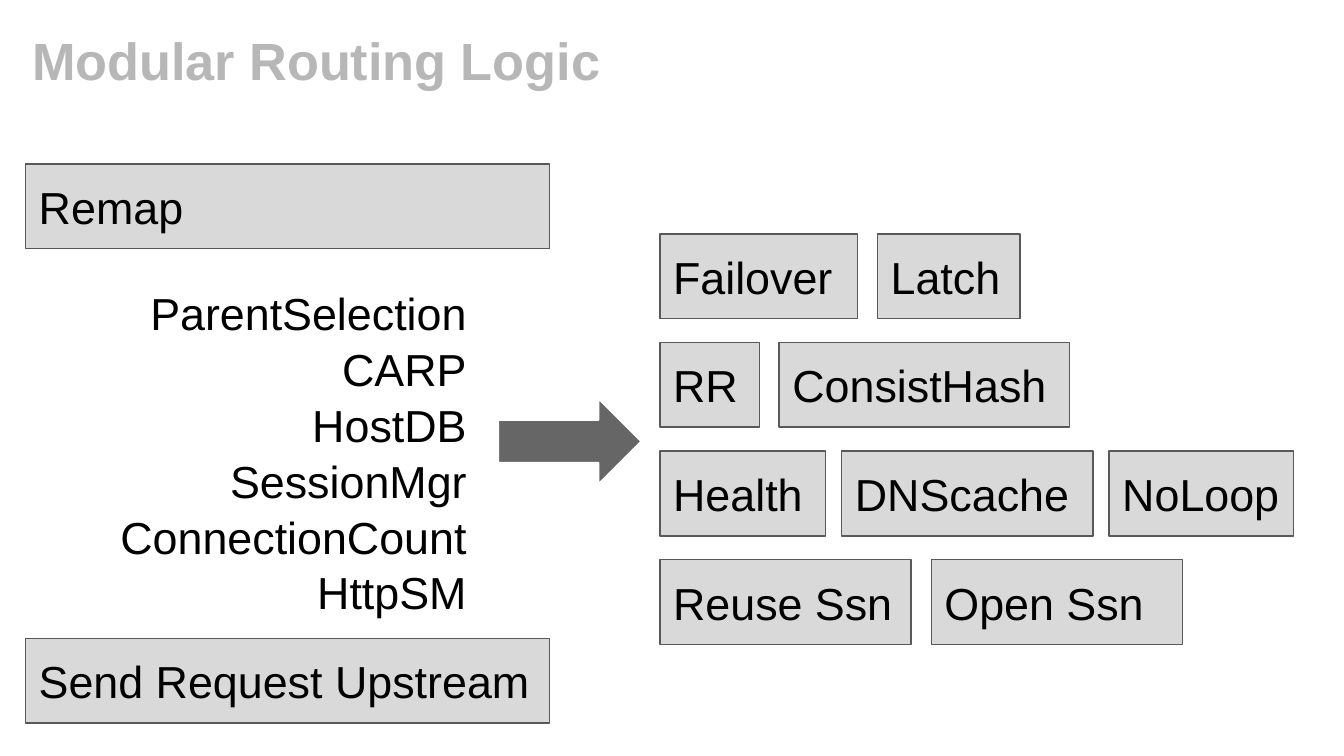
from pptx import Presentation
from pptx.dml.color import RGBColor
from pptx.enum.shapes import MSO_SHAPE as SHAPE
from pptx.enum.text import MSO_ANCHOR as ANCHOR, PP_ALIGN as ALIGN
from pptx.util import Pt

BOX_H = 45.4
ROW_PITCH = 58.2
STEPS = ["ParentSelection", "CARP", "HostDB", "SessionMgr", "ConnectionCount", "HttpSM"]
MODULE_ROWS = [
    (10.8, [("Failover", 105.8), ("Latch", 76.3)]),
    (10.6, [("RR", 53.3), ("ConsistHash", 155.5)]),
    (8.6, [("Health", 88.8), ("DNScache", 134.6), ("NoLoop", 98.8)]),
    (10.8, [("Reuse Ssn", 134.6), ("Open Ssn", 134.6)]),
]


def rgb(value):
    return RGBColor.from_string(value)


def write(s, lines, size=24, color="000000", bold=False, align=ALIGN.LEFT,
          anchor=ANCHOR.MIDDLE, spacing=1.0):
    tf = s.text_frame
    tf.word_wrap = True
    tf.vertical_anchor = anchor
    tf.margin_left = tf.margin_top = tf.margin_bottom = Pt(7.2)
    tf.margin_right = Pt(7.2) if align == ALIGN.RIGHT else 0
    for i, line in enumerate(lines):
        p = tf.paragraphs[0] if i == 0 else tf.add_paragraph()
        p.text = line
        p.alignment = align
        p.line_spacing = spacing
        p.font.name = "Arial"
        p.font.size = Pt(size)
        p.font.bold = bold
        p.font.color.rgb = rgb(color)


def add_shape(slide, kind, x, y, w, h, fill, line):
    s = slide.shapes.add_shape(kind, Pt(x), Pt(y), Pt(w), Pt(h))
    s.shadow.inherit = False
    s.fill.solid()
    s.fill.fore_color.rgb = rgb(fill)
    s.line.color.rgb = rgb(line)
    s.line.width = Pt(0.75)
    return s


def add_box(slide, label, x, y, w):
    s = add_shape(slide, SHAPE.RECTANGLE, x, y, w, BOX_H, "D9D9D9", "595959")
    write(s, [label])


def add_title(slide, x, y, w, h):
    s = slide.shapes.add_textbox(Pt(x), Pt(y), Pt(w), Pt(h))
    write(s, ["Modular Routing Logic"], 28, "B7B7B7", bold=True)


def add_pipeline(slide, x, y, w, h):
    add_box(slide, "Remap", x, y, w)
    add_box(slide, "Send Request Upstream", x, y + h - BOX_H, w)
    s = slide.shapes.add_textbox(Pt(x + 5), Pt(y + 57), Pt(238.3), Pt(183))
    write(s, STEPS, align=ALIGN.RIGHT, anchor=ANCHOR.TOP, spacing=1.04)


def add_modules(slide, x, y):
    for i, (gap, modules) in enumerate(MODULE_ROWS):
        left = x
        for label, w in modules:
            add_box(slide, label, left, y + i * ROW_PITCH, w)
            left += w + gap


def add_arrow(slide, x, y, w, h):
    add_shape(slide, SHAPE.RIGHT_ARROW, x, y, w, h, "666666", "FFFFFF")


def main():
    prs = Presentation()
    prs.slide_width, prs.slide_height = Pt(720), Pt(405)
    slide = prs.slides.add_slide(prs.slide_layouts[6])
    add_title(slide, 10.1, 9.4, 671, 45.4)
    add_pipeline(slide, 13.7, 87.8, 280.8, 299.6)
    add_arrow(slide, 267.1, 213.8, 76.3, BOX_H)
    add_modules(slide, 353.5, 125.3)
    prs.save("out.pptx")


if __name__ == "__main__":
    main()
